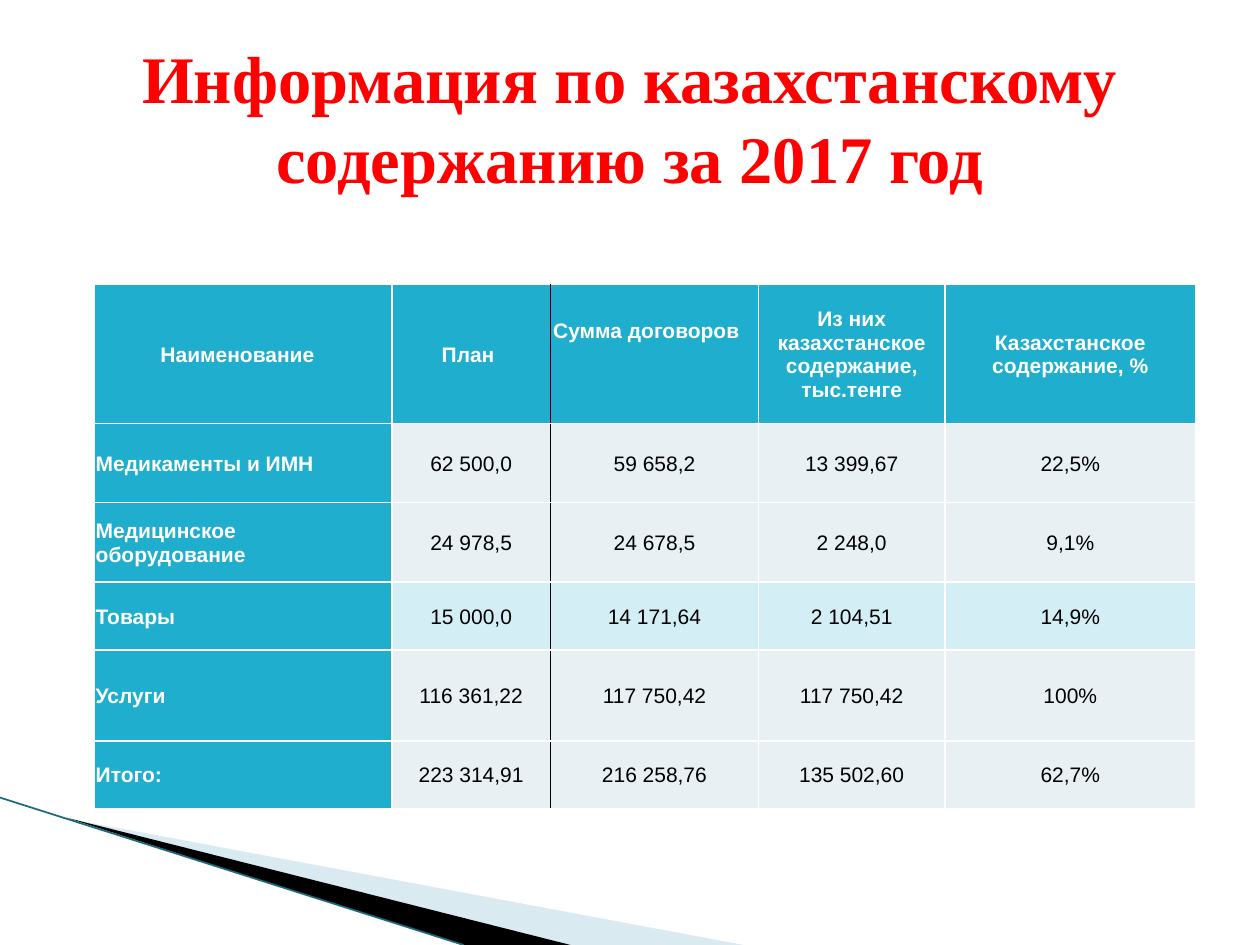
from dataclasses import dataclass

from lxml.etree import SubElement
from pptx import Presentation
from pptx.dml.color import RGBColor
from pptx.enum.text import MSO_ANCHOR, PP_ALIGN
from pptx.oxml.ns import qn
from pptx.util import Inches, Pt

COLORS = {
    "title": "FF0000",
    "header": "1FAECD",
    "row": "E8F0F4",
    "highlight": "D3EEF5",
    "white": "FFFFFF",
    "black": "000000",
    "pale": "A0CBDC",
    "edge": "1A6B7E",
}
HEADERS = [
    "Наименование",
    "План",
    "Сумма договоров",
    "Из них казахстанское содержание, тыс.тенге",
    "Казахстанское содержание, %",
]
HEADER_RIGHT_MARGINS = [0.1, 0.06, 0.14, 0.01, 0.01]
COLUMN_WIDTHS = [2.36, 1.26, 1.65, 1.48, 1.99]
HEADER_HEIGHT = 1.1
DIVIDER_AFTER = 1  # column with the black right border


@dataclass
class Row:
    name: str
    values: list[str]
    height: float
    fill: str = "row"


@dataclass
class Wedge:
    points: list[tuple[float, float]]
    color: str
    opacity: int = 100


ROWS = [
    Row("Медикаменты и ИМН", ["62 500,0", "59 658,2", "13 399,67", "22,5%"], 0.63),
    Row("Медицинское оборудование", ["24 978,5", "24 678,5", "2 248,0", "9,1%"], 0.63),
    Row("Товары", ["15 000,0", "14 171,64", "2 104,51", "14,9%"], 0.54, "highlight"),
    Row("Услуги", ["116 361,22", "117 750,42", "117 750,42", "100%"], 0.72),
    Row("Итого:", ["223 314,91", "216 258,76", "135 502,60", "62,7%"], 0.54),
]
WEDGES = [
    Wedge([(0.55, 6.5), (5.9, 7.5), (4.53, 7.5)], "pale", 40),
    Wedge([(0.53, 6.49), (4.53, 7.5), (3.67, 7.5)], "black"),
]


def rgb(name: str) -> RGBColor:
    return RGBColor.from_string(COLORS[name])


def draw_wedge(page, wedge: Wedge) -> None:
    first, *others = [(Inches(x), Inches(y)) for x, y in wedge.points]
    builder = page.shapes.build_freeform(*first)
    builder.add_line_segments(others, close=True)
    shape = builder.convert_to_shape()
    shape.shadow.inherit = False
    shape.fill.solid()
    shape.fill.fore_color.rgb = rgb(wedge.color)
    shape.line.fill.background()
    if wedge.opacity < 100:
        color = shape.fill._xPr.find(qn("a:solidFill"))[0]
        SubElement(color, qn("a:alpha"), val=str(wedge.opacity * 1000))


def draw_edge(page) -> None:
    edge = page.shapes.add_connector(1, 0, Inches(6.33), Inches(3.68), Inches(7.5))
    edge.line.color.rgb = rgb("edge")
    edge.line.width = Pt(1)
    SubElement(edge._element.spPr, qn("a:effectLst"))


def set_borders(cell, column: int) -> None:
    properties = cell._tc.get_or_add_tcPr()
    dark_sides = {DIVIDER_AFTER: "R", DIVIDER_AFTER + 1: "L"}
    for side in "LRTB":
        color = "black" if dark_sides.get(column) == side else "white"
        line = SubElement(properties, qn(f"a:ln{side}"), w=str(Pt(1)))
        fill = SubElement(line, qn("a:solidFill"))
        SubElement(fill, qn("a:srgbClr"), val=COLORS[color])


def fill_cell(cell, text: str, column: int, fill: str, heading: bool, centered: bool) -> None:
    set_borders(cell, column)
    cell.fill.solid()
    cell.fill.fore_color.rgb = rgb(fill)
    cell.vertical_anchor = MSO_ANCHOR.MIDDLE
    cell.margin_left = cell.margin_right = cell.margin_top = Inches(0.01)
    cell.margin_bottom = 0
    cell.text = text
    para = cell.text_frame.paragraphs[0]
    para.alignment = PP_ALIGN.CENTER if centered else PP_ALIGN.LEFT
    para.font.name = "Arial"
    para.font.size = Pt(12)
    para.font.bold = heading
    para.font.color.rgb = rgb("white" if heading else "black")


def draw_table(page) -> None:
    frame = page.shapes.add_table(
        len(ROWS) + 1, len(HEADERS), Inches(0.75), Inches(2.26),
        Inches(sum(COLUMN_WIDTHS)), Inches(HEADER_HEIGHT + sum(row.height for row in ROWS)),
    )
    table = frame.table
    for column, width in zip(table.columns, COLUMN_WIDTHS):
        column.width = Inches(width)

    # Header row
    table.rows[0].height = Inches(HEADER_HEIGHT)
    for column, (text, margin) in enumerate(zip(HEADERS, HEADER_RIGHT_MARGINS)):
        cell = table.cell(0, column)
        fill_cell(cell, text, column, "header", True, True)
        cell.margin_right = Inches(margin)
    table.cell(0, 2).margin_bottom = Inches(0.38)

    # Data rows
    for index, row in enumerate(ROWS, start=1):
        table.rows[index].height = Inches(row.height)
        fill_cell(table.cell(index, 0), row.name, 0, "header", True, False)
        for column, value in enumerate(row.values, start=1):
            fill_cell(table.cell(index, column), value, column, row.fill, False, True)


def format_title(title) -> None:
    title.left, title.top = Inches(0.5), Inches(0.3)
    title.width, title.height = Inches(9), Inches(1.25)
    title.text_frame.text = "Информация по казахстанскому содержанию за 2017 год"
    title.text_frame.word_wrap = True
    title.text_frame.vertical_anchor = MSO_ANCHOR.MIDDLE
    para = title.text_frame.paragraphs[0]
    para.alignment = PP_ALIGN.CENTER
    para.font.name = "Times New Roman"
    para.font.size = Pt(38)
    para.font.bold = True
    para.font.color.rgb = rgb("title")


def main() -> None:
    deck = Presentation()
    deck.slide_width, deck.slide_height = Inches(10), Inches(7.5)
    page = deck.slides.add_slide(deck.slide_layouts[5])

    # Corner decoration
    for wedge in WEDGES:
        draw_wedge(page, wedge)
    draw_edge(page)

    # Content
    draw_table(page)
    format_title(page.shapes.title)
    deck.save("out.pptx")


if __name__ == "__main__":
    main()
